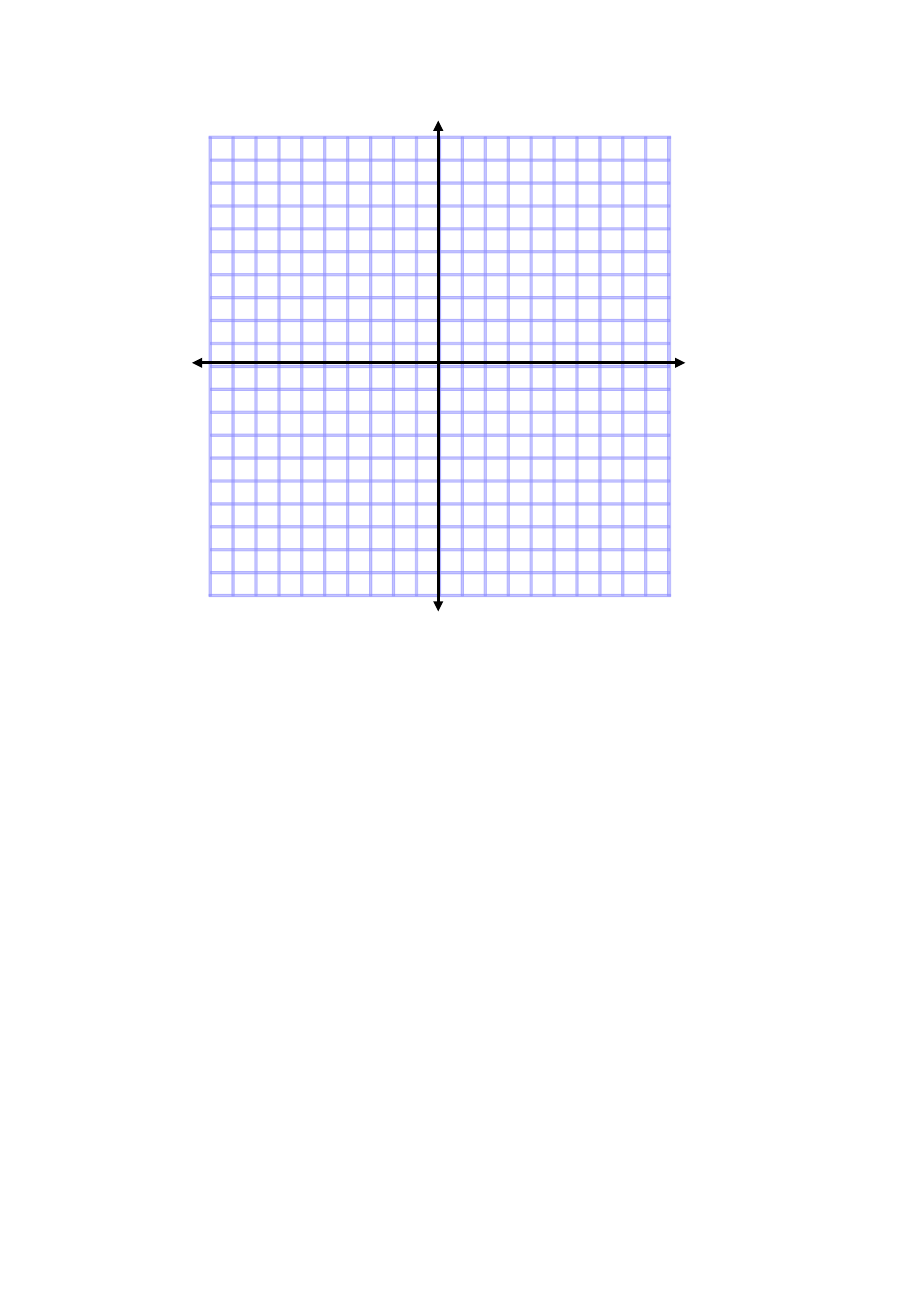
from dataclasses import dataclass

from lxml import etree
from pptx import Presentation
from pptx.dml.color import RGBColor
from pptx.enum.shapes import MSO_CONNECTOR, MSO_SHAPE
from pptx.oxml.ns import qn
from pptx.shapes.group import GroupShape
from pptx.util import Inches, Pt

RECTANGLE = MSO_SHAPE.RECTANGLE
STRAIGHT = MSO_CONNECTOR.STRAIGHT

GRID_BLUE = RGBColor(0x8C, 0x8C, 0xFF)
AXIS_BLACK = RGBColor(0x00, 0x00, 0x00)
GRID_OPACITY = 51

CELLS = 20
GRID_LEFT, GRID_TOP = 2.58, 1.68
GRID_SPAN = 5.66
STEP = GRID_SPAN / CELLS
BAR_THICKNESS = 0.03


@dataclass(frozen=True)
class Bar:
    left: float
    top: float
    width: float
    height: float


@dataclass(frozen=True)
class Axis:
    x1: float
    y1: float
    x2: float
    y2: float


AXES = (Axis(5.41, 7.55, 5.41, 1.49), Axis(2.37, 4.48, 8.46, 4.48))


def grid_bars() -> list[Bar]:
    """Return the bars of the grid; the outer rows reach the grid's corners."""
    bars = []
    for index in range(CELLS + 1):
        is_outer = index in (0, CELLS)
        row_left, row_width = (GRID_LEFT, 5.7) if is_outer else (2.6, 5.67)
        column_width = 0.04 if index == CELLS else BAR_THICKNESS
        bars.append(Bar(GRID_LEFT + index * STEP, 1.69, column_width, 5.67))
        bars.append(Bar(row_left, GRID_TOP + index * STEP, row_width, BAR_THICKNESS))
    return bars


def draw_bar(group: GroupShape, bar: Bar) -> None:
    shape = group.shapes.add_shape(
        RECTANGLE, Inches(bar.left), Inches(bar.top), Inches(bar.width), Inches(bar.height)
    )
    shape.shadow.inherit = False
    shape.line.width = Pt(0)
    for fill in (shape.fill, shape.line.fill):
        fill.solid()
        fill.fore_color.rgb = GRID_BLUE
    for color in shape.element.spPr.iter(qn("a:srgbClr")):
        etree.SubElement(color, qn("a:alpha"), val=str(GRID_OPACITY * 1000))


def draw_axis(group: GroupShape, axis: Axis) -> None:
    connector = group.shapes.add_connector(
        STRAIGHT, Inches(axis.x1), Inches(axis.y1), Inches(axis.x2), Inches(axis.y2)
    )
    connector.line.width = Pt(3)
    connector.line.color.rgb = AXIS_BLACK
    properties = connector.element.spPr
    outline = properties.find(qn("a:ln"))
    for end in ("a:headEnd", "a:tailEnd"):
        etree.SubElement(outline, qn(end), type="triangle")
    etree.SubElement(properties, qn("a:effectLst"))


def main() -> None:
    deck = Presentation()
    deck.slide_width = Inches(11.11)
    deck.slide_height = Inches(16.25)
    page = deck.slides.add_slide(deck.slide_layouts[6])
    plane = page.shapes.add_group_shape()
    for bar in grid_bars():
        draw_bar(plane, bar)
    for axis in AXES:
        draw_axis(plane, axis)
    deck.save("out.pptx")


if __name__ == "__main__":
    main()
